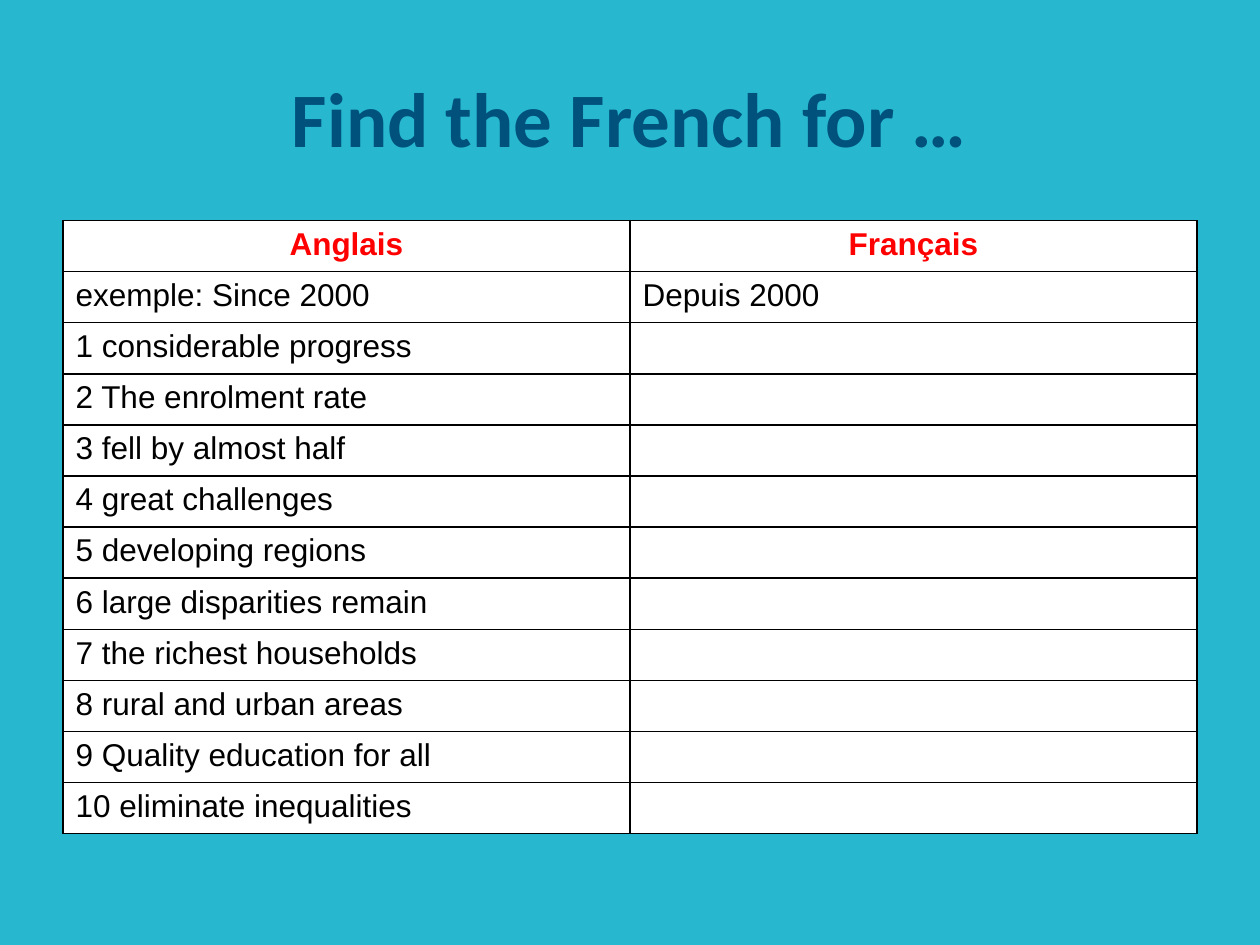
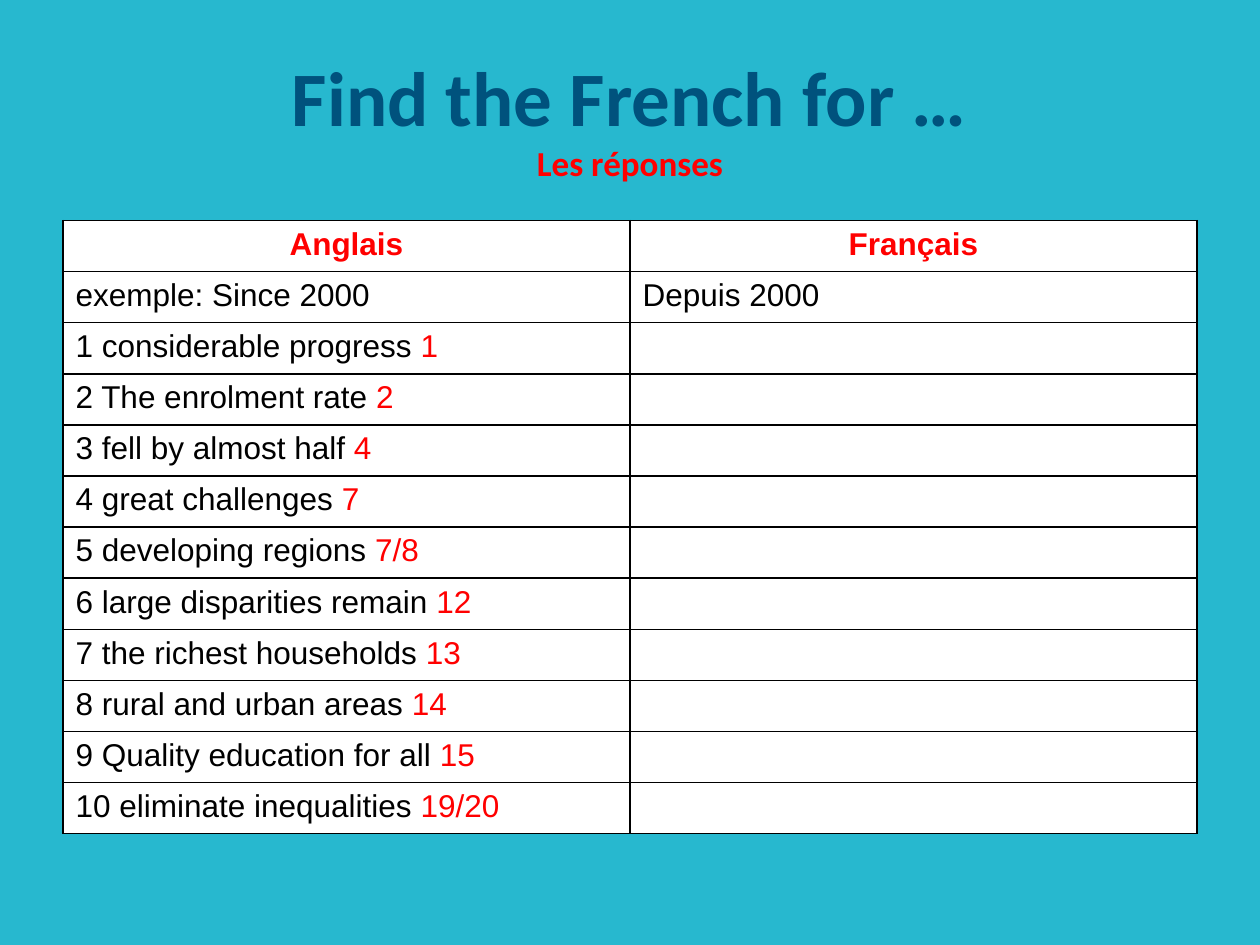
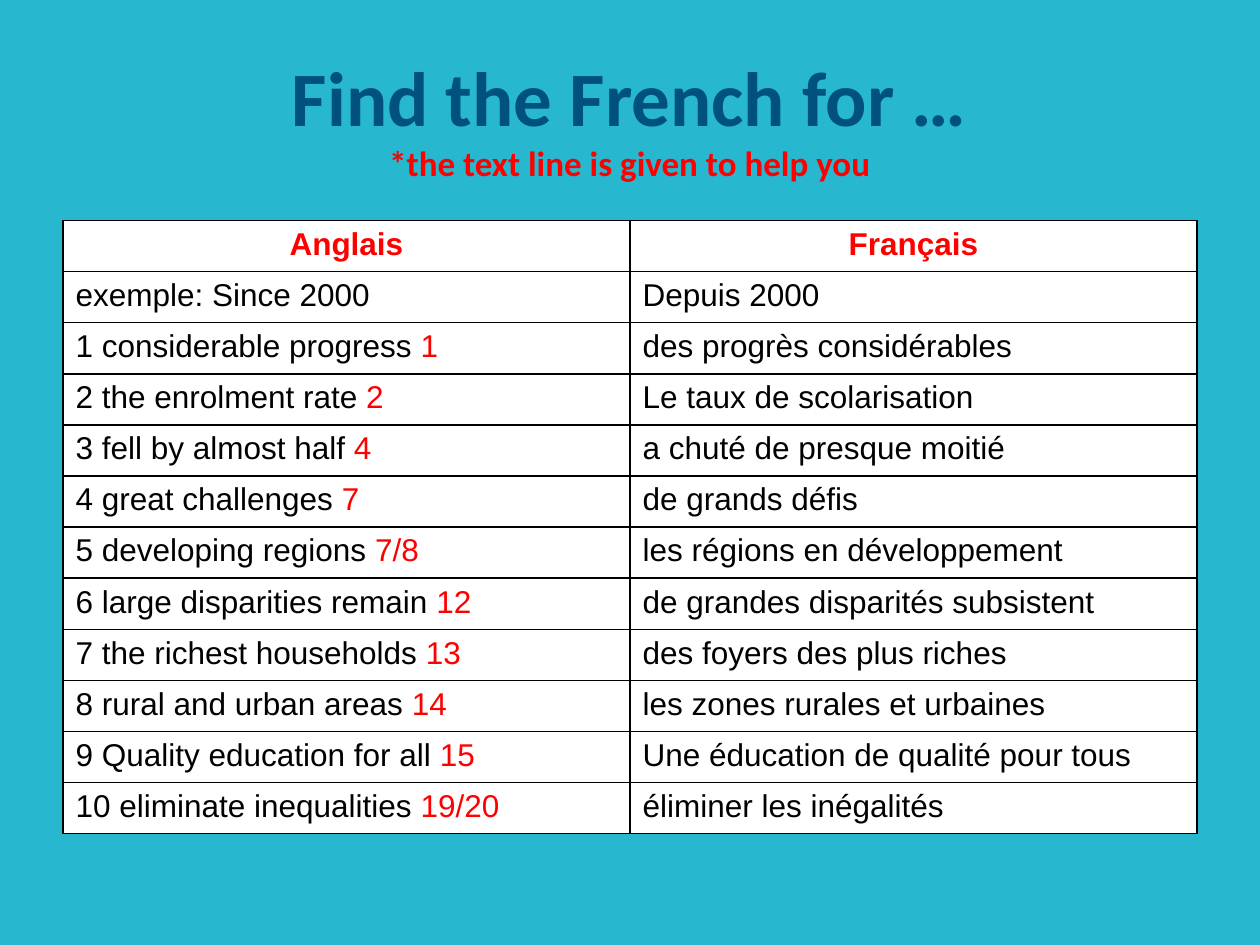
import pptx
import pptx.dml.color
import pptx.enum.text
import pptx.oxml.ns
import pptx.util
from dataclasses import dataclass
from lxml import etree

# Content
HEADING = "Find the French for …"
COLUMN_HEADINGS = ("Anglais", "Français")
EXAMPLE = ("exemple: Since 2000", "Depuis 2000")

# English phrase, line of the text, French phrase
PHRASES = [
    ("considerable progress", "1", "des progrès considérables"),
    ("The enrolment rate", "2", "Le taux de scolarisation"),
    ("fell by almost half", "4", "a chuté de presque moitié"),
    ("great challenges", "7", "de grands défis"),
    ("developing regions", "7/8", "les régions en développement"),
    ("large disparities remain", "12", "de grandes disparités subsistent"),
    ("the richest households", "13", "des foyers des plus riches"),
    ("rural and urban areas", "14", "les zones rurales et urbaines"),
    ("Quality education for all", "15", "Une éducation de qualité pour tous"),
    ("eliminate inequalities", "19/20", "éliminer les inégalités"),
]
ANSWER_PHRASES = [
    (english.replace("The ", "the "), line, french)
    for english, line, french in PHRASES
]

EXERCISES = [
    {"subtitle": "", "phrases": PHRASES, "lines": False, "answers": False},
    {"subtitle": "Les réponses", "phrases": PHRASES, "lines": True, "answers": False},
    {"subtitle": "*the text line is given to help you", "phrases": ANSWER_PHRASES,
     "lines": True, "answers": True},
]


# Look
@dataclass(frozen=True)
class Theme:
    background: str = "27B8CF"
    heading: str = "00527D"
    accent: str = "FF0000"
    ink: str = "000000"
    paper: str = "FFFFFF"
    heading_font: str = "Calibri"
    table_font: str = "Arial"
    heading_size: int = 44
    subtitle_size: int = 20
    table_size: int = 18
    border_width: int = 1


THEME = Theme()
CENTER = pptx.enum.text.PP_ALIGN.CENTER
LEFT = pptx.enum.text.PP_ALIGN.LEFT

# Layout, at 100 px to the inch
PX = 9144
SLIDE_SIZE = (1000, 750)
TITLE_BOX = (50, 30, 900, 125)
TABLE_BOX = (50, 175, 900, 487)


def emu(*lengths):
    return [pptx.util.Emu(length * PX) for length in lengths]


def rgb(colour):
    return pptx.dml.color.RGBColor.from_string(colour)


def write(paragraph, text, *, font=THEME.table_font, size=THEME.table_size,
          colour=THEME.ink, bold=False, align=LEFT):
    paragraph.alignment = align
    run = paragraph.add_run()
    run.text = text
    run.font.name = font
    run.font.size = pptx.util.Pt(size)
    run.font.bold = bold
    run.font.color.rgb = rgb(colour)


def style_cell(cell):
    """Black border on all sides and a white fill."""
    properties = cell._tc.get_or_add_tcPr()
    qn = pptx.oxml.ns.qn
    for side in ("a:lnL", "a:lnR", "a:lnT", "a:lnB"):
        border = etree.SubElement(properties, qn(side),
                                  w=str(pptx.util.Pt(THEME.border_width)))
        paint = etree.SubElement(border, qn("a:solidFill"))
        etree.SubElement(paint, qn("a:srgbClr"), val=THEME.ink)
    cell.fill.solid()
    cell.fill.fore_color.rgb = rgb(THEME.paper)


def add_title(slide, subtitle):
    frame = slide.shapes.add_textbox(*emu(*TITLE_BOX)).text_frame
    frame.word_wrap = True
    frame.vertical_anchor = pptx.enum.text.MSO_ANCHOR.MIDDLE
    paragraph = frame.paragraphs[0]
    shared = {"font": THEME.heading_font, "bold": True, "align": CENTER}
    write(paragraph, HEADING, size=THEME.heading_size, colour=THEME.heading, **shared)
    if subtitle:
        paragraph.add_line_break()
        write(paragraph, subtitle, size=THEME.subtitle_size, colour=THEME.accent, **shared)


def add_vocabulary(slide, phrases, lines, answers):
    row_count = len(phrases) + 2
    table = slide.shapes.add_table(row_count, len(COLUMN_HEADINGS), *emu(*TABLE_BOX)).table
    table.first_row = False
    table.horz_banding = False
    for row in table.rows:
        row.height = emu(TABLE_BOX[3])[0] // row_count
    for cell in table.iter_cells():
        style_cell(cell)

    def paragraph_at(row, column):
        return table.cell(row, column).text_frame.paragraphs[0]

    # Column headings and worked example
    for column, (heading, example) in enumerate(zip(COLUMN_HEADINGS, EXAMPLE)):
        write(paragraph_at(0, column), heading, colour=THEME.accent, bold=True, align=CENTER)
        write(paragraph_at(1, column), example)

    # Numbered phrases
    for number, (english, line, french) in enumerate(phrases, start=1):
        prompt = paragraph_at(number + 1, 0)
        write(prompt, f"{number} {english}" + (" " if lines else ""))
        if lines:
            write(prompt, line, colour=THEME.accent)
        if answers:
            write(paragraph_at(number + 1, 1), french)


def main():
    deck = pptx.Presentation()
    deck.slide_width, deck.slide_height = emu(*SLIDE_SIZE)
    backdrop = deck.slide_master.background.fill
    backdrop.solid()
    backdrop.fore_color.rgb = rgb(THEME.background)
    blank = deck.slide_layouts[6]
    for exercise in EXERCISES:
        slide = deck.slides.add_slide(blank)
        add_title(slide, exercise["subtitle"])
        add_vocabulary(slide, exercise["phrases"], exercise["lines"], exercise["answers"])
    deck.save("out.pptx")


if __name__ == "__main__":
    main()
